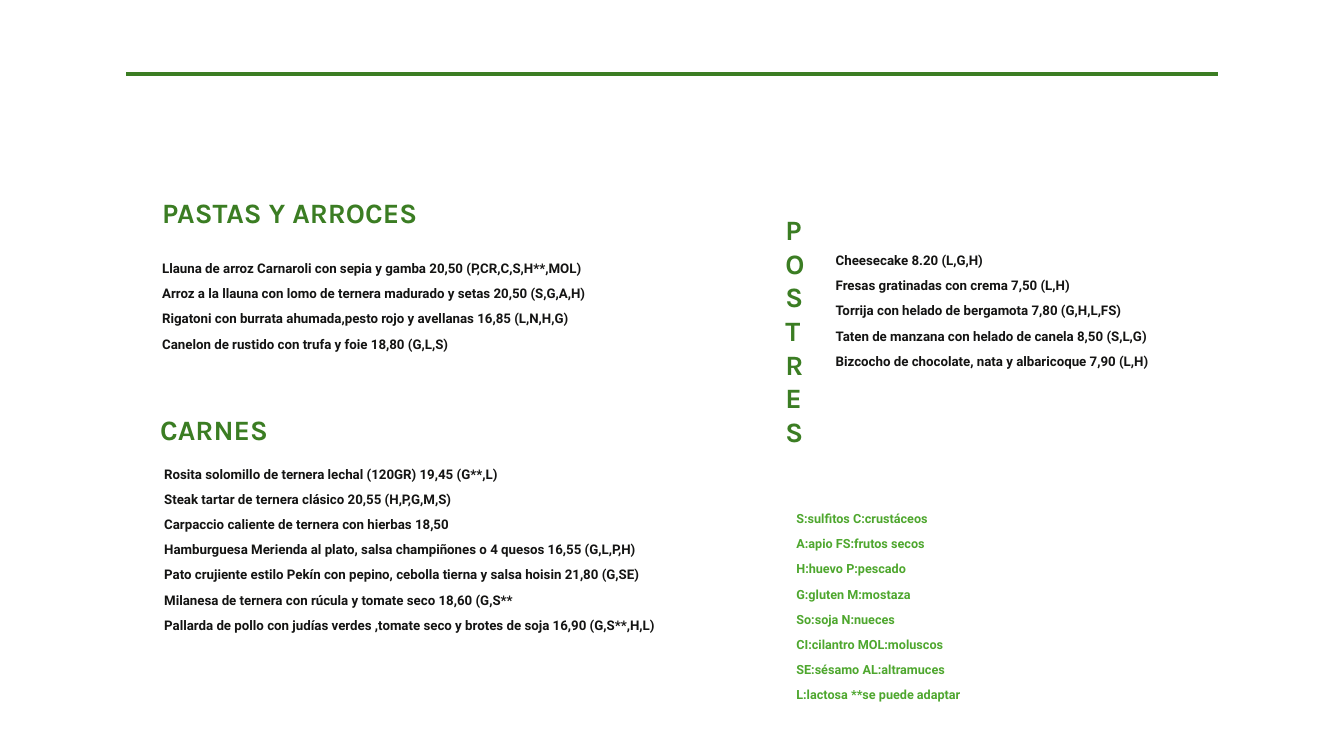
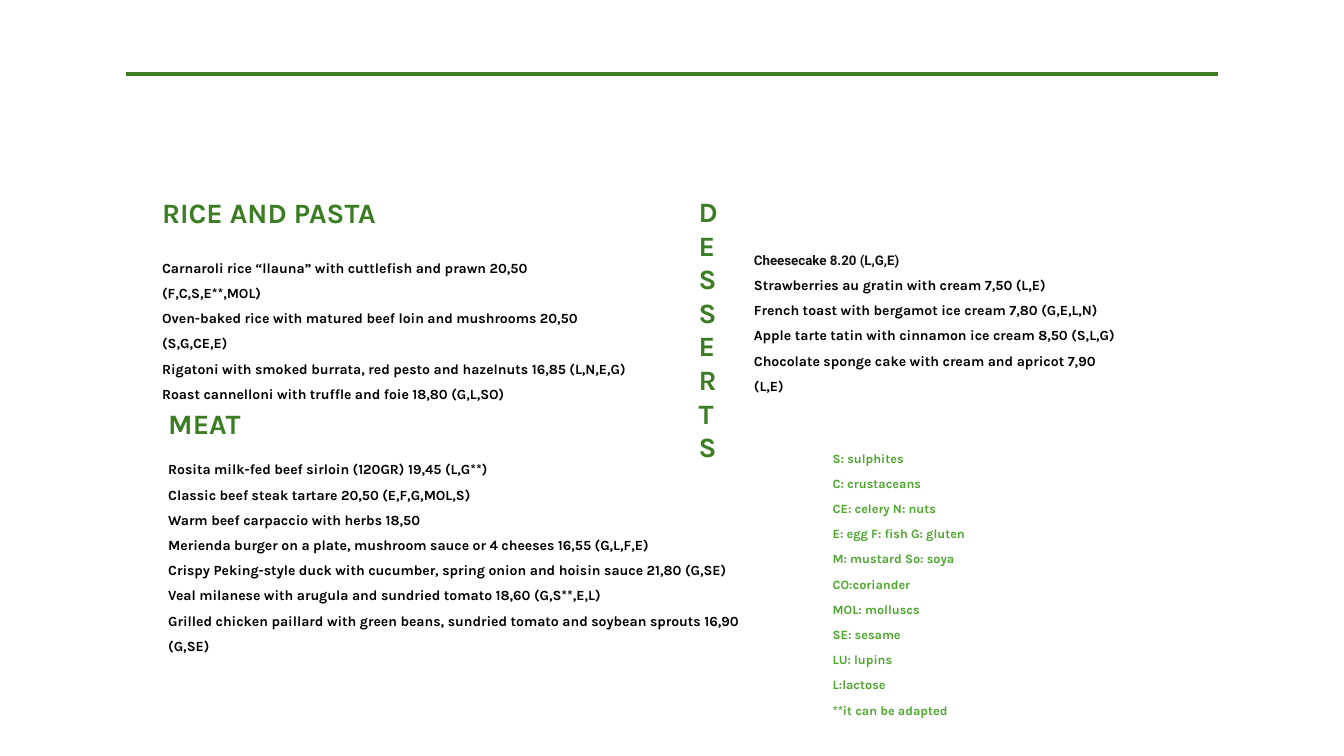
from pptx import Presentation
from pptx.dml.color import RGBColor
from pptx.enum.shapes import MSO_CONNECTOR, MSO_SHAPE
from pptx.enum.text import MSO_ANCHOR, PP_ALIGN
from pptx.oxml.ns import qn
from pptx.util import Inches, Pt
from lxml import etree

STRAIGHT = MSO_CONNECTOR.STRAIGHT
RECTANGLE = MSO_SHAPE.RECTANGLE
TOP = MSO_ANCHOR.TOP
LEFT = PP_ALIGN.LEFT

GREEN = RGBColor(0x3B, 0x7D, 0x23)
LIGHT_GREEN = RGBColor(0x4E, 0xA7, 0x2E)
INK = RGBColor(0x14, 0x14, 0x13)
BLACK = RGBColor(0, 0, 0)
WHITE = RGBColor(0xFF, 0xFF, 0xFF)

# Text styles: font, size, colour
HEADING = ("Karla", 20, GREEN)
DISH_ROBOTO = ("Roboto", 9.5, INK)
DISH_KARLA = ("Karla", 10, BLACK)
LEGEND_ROBOTO = ("Roboto", 9, LIGHT_GREEN)
LEGEND_KARLA = ("Karla", 9, LIGHT_GREEN)

LINE_PT = 18      # line spacing of dishes and legend
HEADING_LINE = 0.34
PAD = 0.1         # top and bottom insets together

# Each block: left, top, width, style, lines; a line may carry its own style
MENUS = [
    {
        "blocks": [
            (1.51, 1.89, 3.97, HEADING, ["PASTAS Y ARROCES"]),
            (1.51, 2.44, 4.68, DISH_ROBOTO, [
                "Llauna de arroz Carnaroli con sepia y gamba 20,50 (P,CR,C,S,H**,MOL)",
                "Arroz a la llauna con lomo de ternera madurado y setas 20,50 (S,G,A,H)",
                "Rigatoni con burrata ahumada,pesto rojo y avellanas 16,85 (L,N,H,G)",
                "Canelon de rustido con trufa y foie 18,80 (G,L,S)",
            ]),
            (1.49, 4.04, 2.45, HEADING, ["CARNES"]),
            (1.53, 4.48, 5.65, DISH_ROBOTO, [
                "Rosita solomillo de ternera lechal (120GR) 19,45 (G**,L)",
                "Steak tartar de ternera clásico 20,55 (H,P,G,M,S)",
                "Carpaccio caliente de ternera con hierbas 18,50",
                "Hamburguesa Merienda al plato, salsa champiñones o 4 quesos 16,55 (G,L,P,H)",
                "Pato crujiente estilo Pekín con pepino, cebolla tierna y salsa hoisin 21,80 (G,SE)",
                "Milanesa de ternera con rúcula y tomate seco 18,60 (G,S**",
                "Pallarda de pollo con judías verdes ,tomate seco y brotes de soja 16,90 (G,S**,H,L)",
            ]),
            (7.8, 4.92, 4.28, LEGEND_ROBOTO, [
                "S:sulfitos C:crustáceos",
                "A:apio FS:frutos secos",
                "H:huevo P:pescado",
                "G:gluten M:mostaza",
                "So:soja N:nueces",
                "CI:cilantro MOL:moluscos",
                "SE:sésamo AL:altramuces",
                "L:lactosa **se puede adaptar",
            ]),
        ],
        "desserts": (8.19, DISH_ROBOTO, [
            "Cheesecake 8.20 (L,G,H)",
            "Fresas gratinadas con crema 7,50 (L,H)",
            "Torrija con helado de bergamota 7,80 (G,H,L,FS)",
            "Taten de manzana con helado de canela 8,50 (S,L,G)",
            "Bizcocho de chocolate, nata y albaricoque 7,90 (L,H)",
        ]),
        "vertical": (7.69, 2.06, "POSTRES"),
    },
    {
        "blocks": [
            (1.51, 1.89, 3.97, HEADING, ["RICE AND PASTA"]),
            (1.51, 2.44, 4.82, DISH_KARLA, [
                "Carnaroli rice “llauna” with cuttlefish and prawn 20,50 (F,C,S,E**,MOL)",
                "Oven-baked rice with matured beef loin and mushrooms 20,50 (S,G,CE,E)",
                "Rigatoni with smoked burrata, red pesto and hazelnuts 16,85 (L,N,E,G)",
                "Roast cannelloni with truffle and foie 18,80 (G,L,SO)",
            ]),
            (1.57, 3.98, 2.45, HEADING, ["MEAT"]),
            (1.57, 4.44, 6.08, DISH_KARLA, [
                "Rosita milk-fed beef sirloin (120GR) 19,45 (L,G**)",
                "Classic beef steak tartare 20,50 (E,F,G,MOL,S)",
                "Warm beef carpaccio with herbs 18,50",
                "Merienda burger on a plate, mushroom sauce or 4 cheeses 16,55 (G,L,F,E)",
                "Crispy Peking-style duck with cucumber, spring onion and hoisin sauce 21,80 (G,SE)",
                "Veal milanese with arugula and sundried tomato 18,60 (G,S**,E,L)",
                "Grilled chicken paillard with green beans, sundried tomato and soybean sprouts 16,90 (G,SE)",
            ]),
            (8.16, 4.32, 3.92, LEGEND_KARLA, [
                "S: sulphites",
                "C: crustaceans",
                "CE: celery N: nuts",
                "E: egg F: fish G: gluten",
                "M: mustard So: soya",
                "CO:coriander",
                "MOL: molluscs",
                "SE: sesame",
                "LU: lupins",
                "L:lactose",
                "**it can be adapted",
            ]),
        ],
        "desserts": (7.38, DISH_KARLA, [
            ("Cheesecake 8.20 (L,G,E)", DISH_ROBOTO),
            "Strawberries au gratin with cream 7,50 (L,E)",
            "French toast with bergamot ice cream 7,80 (G,E,L,N)",
            "Apple tarte tatin with cinnamon ice cream 8,50 (S,L,G)",
            "Chocolate sponge cake with cream and apricot 7,90 (L,E)",
        ]),
        "vertical": (6.83, 1.88, "DESSERTS"),
    },
]


def add_rule(s):
    line = s.shapes.add_connector(STRAIGHT, Inches(1.25), Inches(0.73),
                                  Inches(12.08), Inches(0.73))
    line.line.color.rgb = GREEN
    line.line.width = Pt(2.75)
    etree.SubElement(line._element.spPr, qn("a:effectLst"))


def write_lines(sp, style, lines):
    tf = sp.text_frame
    tf.word_wrap = True
    tf.vertical_anchor = TOP
    for i, line in enumerate(lines):
        text, (font, size, color) = line if isinstance(line, tuple) else (line, style)
        p = tf.paragraphs[0] if i == 0 else tf.add_paragraph()
        p.text = text
        p.alignment = LEFT
        if style is not HEADING:
            p.line_spacing = Pt(LINE_PT)
        r = p.runs[0]
        r.font.name = font
        r.font.size = Pt(size)
        r.font.bold = True
        r.font.color.rgb = color


def add_block(s, left, top, width, style, lines, rows=None):
    line_height = HEADING_LINE if style is HEADING else LINE_PT / 72
    height = (rows or len(lines)) * line_height + PAD
    sp = s.shapes.add_textbox(Inches(left), Inches(top), Inches(width), Inches(height))
    write_lines(sp, style, lines)


def add_dessert_panel(s, left, style, lines):
    sp = s.shapes.add_shape(RECTANGLE, Inches(left), Inches(2.11),
                            Inches(3.9), Inches(2.48))
    sp.shadow.inherit = False
    sp.fill.solid()
    sp.fill.fore_color.rgb = WHITE
    sp.line.fill.background()
    sp.text_frame.margin_top = Inches(0.3)
    write_lines(sp, style, lines)


def main():
    prs = Presentation()
    prs.slide_width = Inches(13.33)
    prs.slide_height = Inches(7.5)
    for menu in MENUS:
        s = prs.slides.add_slide(prs.slide_layouts[6])
        add_rule(s)
        # The panel lies under the texts that touch its edges
        add_dessert_panel(s, *menu["desserts"])
        for block in menu["blocks"]:
            add_block(s, *block)
        # Narrow box, so the word wraps to one letter a line
        left, top, word = menu["vertical"]
        add_block(s, left, top, 0.45, HEADING, [word], rows=len(word))
    prs.save("out.pptx")


if __name__ == "__main__":
    main()
